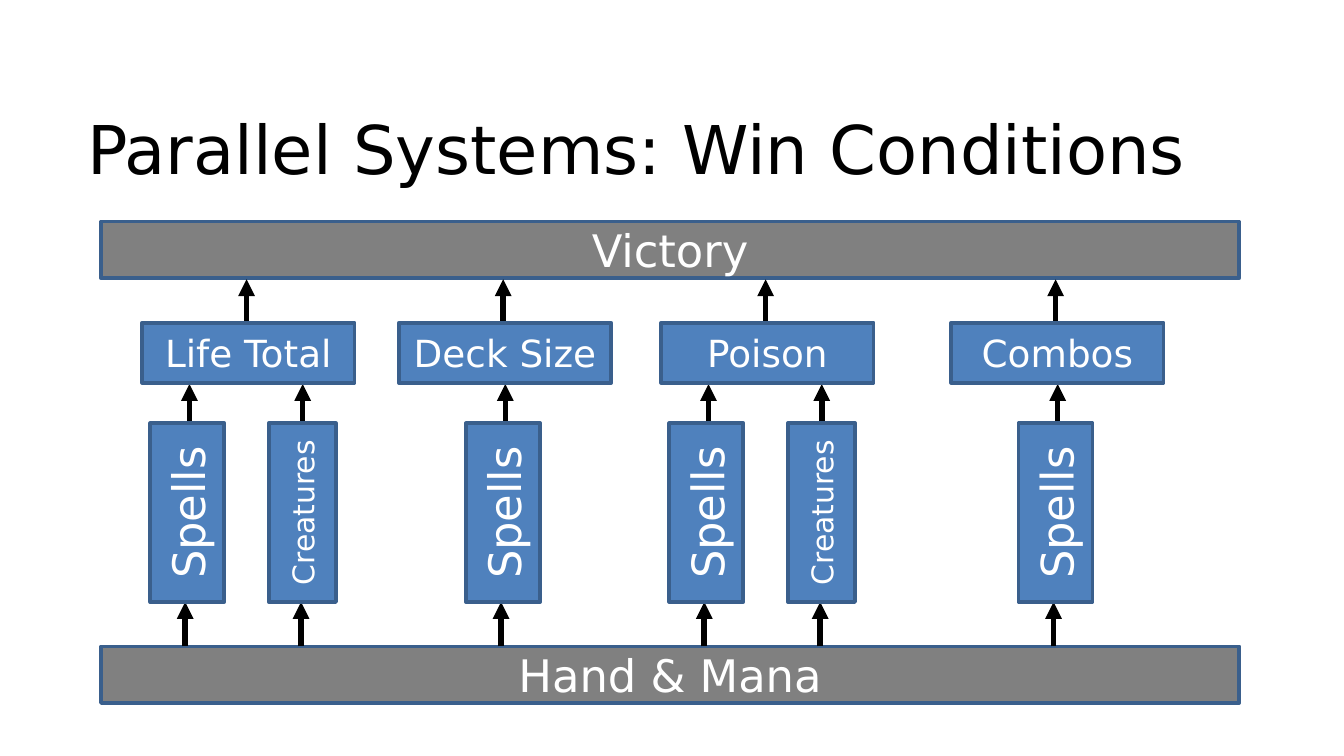
import pptx
import pptx.util
import pptx.dml.color
import pptx.enum.shapes
import pptx.enum.text
import pptx.oxml
import pptx.oxml.ns

Cm = pptx.util.Cm
Pt = pptx.util.Pt
RGB = pptx.dml.color.RGBColor
Enum = pptx.enum.text

BLACK = RGB(0x00, 0x00, 0x00)
WHITE = RGB(0xFF, 0xFF, 0xFF)
GRAY = RGB(0x80, 0x80, 0x80)
BLUE = RGB(0x4F, 0x81, 0xBD)
EDGE = RGB(0x3A, 0x5F, 0x8C)
FONT = "DejaVu Sans"

# Rows, in cm: top and height
TOP_BAR = (4.19, 1.07)
GOALS = (6.1, 1.14)
CARDS = (8.0, 3.38)
LOW_BAR = (12.22, 1.07)

# Card kinds: width, text size, arrow offset above and below
KINDS = {"Spells": (1.4, 24, 0.74, 0.66), "Creatures": (1.27, 16, 0.64, 0.61)}

# Columns: left, goal, cards with their offset from the left
PAIR = [("Spells", 0.15), ("Creatures", 2.39)]
SOLO = [("Spells", 1.27)]
COLUMNS = [
    (2.69, "Life Total", PAIR),
    (7.54, "Deck Size", SOLO),
    (12.5, "Poison", PAIR),
    (17.98, "Combos", SOLO),
]


def style(frame, size, color, align, anchor, inset):
    frame.word_wrap = True
    frame.auto_size = Enum.MSO_AUTO_SIZE.NONE
    frame.vertical_anchor = anchor
    frame.margin_left = frame.margin_right = Cm(inset)
    frame.margin_top = frame.margin_bottom = Cm(inset)
    para = frame.paragraphs[0]
    para.alignment = align
    font = para.runs[0].font
    font.name, font.size = FONT, Pt(size)
    font.color.rgb = color


def add_title(slide, text, x, y, w, h):
    title = slide.shapes.title
    title.left, title.top, title.width, title.height = Cm(x), Cm(y), Cm(w), Cm(h)
    title.text_frame.text = text
    style(title.text_frame, 36, BLACK, Enum.PP_ALIGN.LEFT,
          Enum.MSO_ANCHOR.TOP, 0.18)


def add_box(slide, text, x, y, w, h, fill, size, upright=False):
    kind = pptx.enum.shapes.MSO_SHAPE.RECTANGLE
    box = slide.shapes.add_shape(kind, Cm(x), Cm(y), Cm(w), Cm(h))
    box.shadow.inherit = False
    box.fill.solid()
    box.fill.fore_color.rgb = fill
    box.line.color.rgb = EDGE
    box.line.width = Pt(2)
    frame = box.text_frame
    frame.text = text
    style(frame, size, WHITE, Enum.PP_ALIGN.CENTER, Enum.MSO_ANCHOR.MIDDLE, 0)
    if upright:
        frame._txBody.bodyPr.set("vert", "vert270")


def add_arrow(slide, x, start, end):
    kind = pptx.enum.shapes.MSO_CONNECTOR.STRAIGHT
    arrow = slide.shapes.add_connector(kind, Cm(x), Cm(start), Cm(x), Cm(end))
    arrow.line.color.rgb = BLACK
    arrow.line.width = Pt(3)
    space = pptx.oxml.ns.nsdecls("a")
    line = arrow.line._get_or_add_ln()
    line.append(pptx.oxml.parse_xml(f'<a:tailEnd {space} type="triangle"/>'))
    arrow._element.spPr.append(pptx.oxml.parse_xml(f"<a:effectLst {space}/>"))


def add_column(slide, x, w, goal, cards):
    # Arrows first, so that the boxes cover their tails
    add_arrow(slide, x + 1.97, GOALS[0] + 0.45, sum(TOP_BAR) + 0.02)
    for name, shift in cards:
        above, below = KINDS[name][2:]
        left = x + shift
        add_arrow(slide, left + above, CARDS[0] + 0.53, sum(GOALS) + 0.02)
        add_arrow(slide, left + below, LOW_BAR[0], sum(CARDS))

    # Cards and the goal they lead to
    for name, shift in cards:
        wide, size = KINDS[name][:2]
        add_box(slide, name, x + shift, CARDS[0], wide, CARDS[1], BLUE, size, True)
    add_box(slide, goal, x, GOALS[0], w, GOALS[1], BLUE, 20)


def main():
    deck = pptx.Presentation()
    deck.slide_width, deck.slide_height = Cm(25.4), Cm(14.29)
    slide = deck.slides.add_slide(deck.slide_layouts[5])

    add_title(slide, "Parallel Systems: Win Conditions", 1.47, 1.85, 22.43, 2.16)
    for text, (top, high) in (("Victory", TOP_BAR), ("Hand & Mana", LOW_BAR)):
        add_box(slide, text, 1.91, top, 21.51, high, GRAY, 24)
    for left, goal, cards in COLUMNS:
        add_column(slide, left, 4.01, goal, cards)

    deck.save("out.pptx")


if __name__ == "__main__":
    main()
